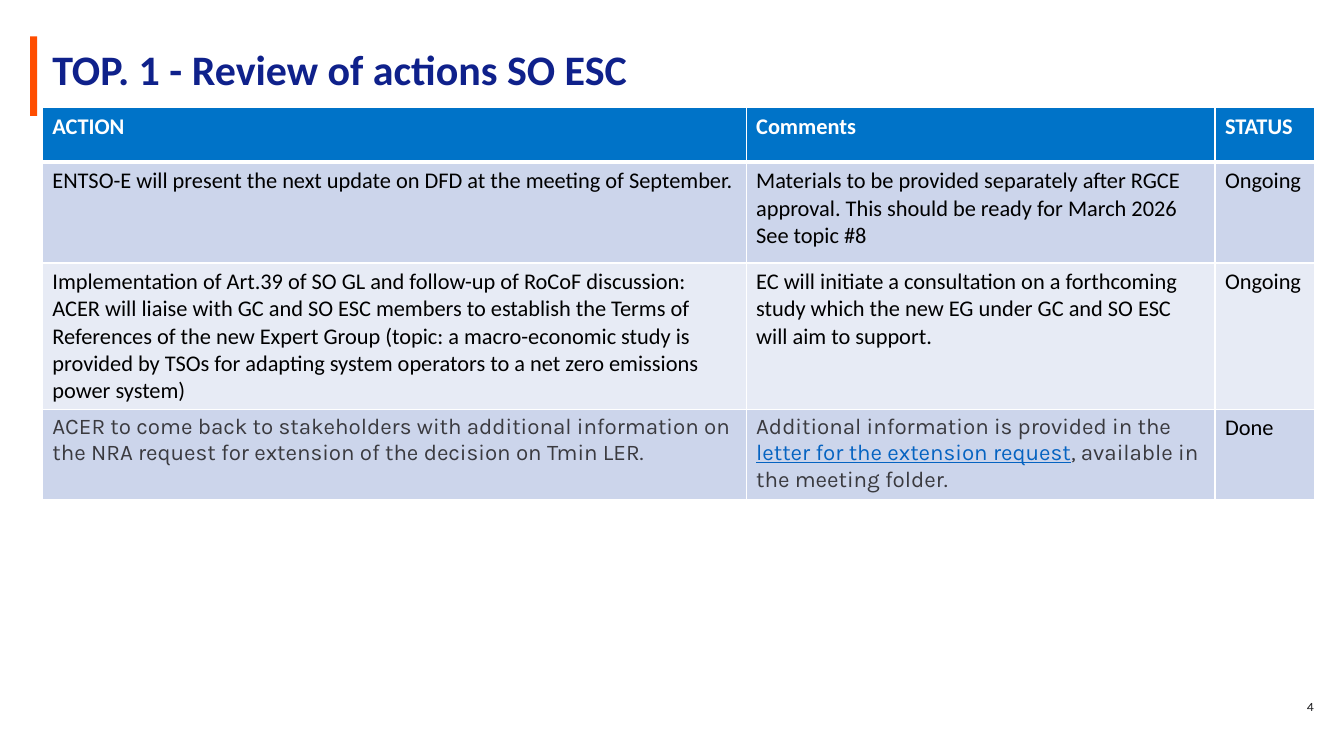
from lxml import etree
from pptx import Presentation
from pptx.dml.color import RGBColor
from pptx.enum.shapes import MSO_SHAPE
from pptx.enum.text import MSO_ANCHOR, PP_ALIGN
from pptx.oxml.ns import qn
from pptx.util import Inches, Pt

RECTANGLE = MSO_SHAPE.RECTANGLE
MIDDLE = MSO_ANCHOR.MIDDLE
LEFT, RIGHT = PP_ALIGN.LEFT, PP_ALIGN.RIGHT

COLORS = {
    "title": "0F218B", "accent": "FF4D00", "number": "1D1D20",
    "header": "0073C8", "odd": "CCD5EB", "even": "E7EBF5",
    "white": "FFFFFF", "black": "000000", "grey": "3A3A3F", "link": "0563C1",
}

# Content: a cell is a list of paragraphs, a paragraph a list of spans
TITLE = "TOP. 1 - Review of actions SO ESC"
PAGE_NUMBER = "4"
HEADER = [[["ACTION"]], [["Comments"]], [["STATUS"]]]
LINK = "letter for the extension request"
ACTIONS = [
    [
        [["ENTSO-E will present the next update on DFD at the meeting of September."]],
        [["Materials to be provided separately after RGCE approval. "
          "This should be ready for March 2026"],
         ["See topic #8"]],
        [["Ongoing"]],
    ],
    [
        [["Implementation of Art.39 of SO GL and follow-up of RoCoF discussion: "
          "ACER will liaise with GC and SO ESC members to establish the Terms of "
          "References of the new Expert Group (topic: a macro-economic study is "
          "provided by TSOs for adapting system operators to a net zero emissions "
          "power system)"]],
        [["EC will initiate a consultation on a forthcoming study which the new EG "
          "under GC and SO ESC will aim to support."]],
        [["Ongoing"]],
    ],
    [
        [["ACER to come back to stakeholders with additional information on the NRA "
          "request for extension of the decision on Tmin LER."]],
        [["Additional information is provided in the ", LINK,
          ", available in the meeting folder."]],
        [["Done"]],
    ],
]
COLUMN_WIDTHS = [6.98, 4.65, 0.99]
ROW_HEIGHTS = [0.54, 1, 1.45, 0.88]
KARLA_CELLS = {(3, 0), (3, 1)}


def rgb(name):
    return RGBColor.from_string(COLORS[name])


def style(font, name, size, color, bold=False):
    font.name, font.size, font.bold = name, Pt(size), bold
    font.color.rgb = rgb(color)


def add_label(page, text, bounds, align, line_height, *font_style):
    box = page.shapes.add_textbox(*map(Inches, bounds))
    frame = box.text_frame
    frame.word_wrap = True
    frame.vertical_anchor = MIDDLE
    para = frame.paragraphs[0]
    para.text = text
    para.alignment = align
    para.line_spacing = Pt(line_height)
    style(para.font, *font_style)


def set_borders(cell, row):
    top = 3 if row == 1 else 1
    bottom = 3 if row == 0 else 1
    properties = cell._tc.get_or_add_tcPr()
    for side, width in (("L", 1), ("R", 1), ("T", top), ("B", bottom)):
        line = etree.SubElement(properties, qn(f"a:ln{side}"), w=str(Pt(width)))
        fill = etree.SubElement(line, qn("a:solidFill"))
        etree.SubElement(fill, qn("a:srgbClr"), val=COLORS["white"])


def fill_cell(cell, paragraphs, row, column):
    set_borders(cell, row)
    cell.fill.solid()
    band = "header" if row == 0 else "odd" if row % 2 else "even"
    cell.fill.fore_color.rgb = rgb(band)
    if row == 0:
        font_style = ("Calibri", 16, "white", True)
    elif (row, column) in KARLA_CELLS:
        font_style = ("Karla", 16, "grey")
    else:
        font_style = ("Calibri", 16, "black")
    frame = cell.text_frame
    for index, spans in enumerate(paragraphs):
        para = frame.add_paragraph() if index else frame.paragraphs[0]
        style(para.font, *font_style)
        for text in spans:
            span = para.add_run()
            span.text = text
            style(span.font, *font_style)
            if text == LINK:
                span.font.color.rgb = rgb("link")
                span.font.underline = True


def main():
    deck = Presentation()
    deck.slide_width, deck.slide_height = Inches(13.33), Inches(7.5)
    page = deck.slides.add_slide(deck.slide_layouts[6])

    # Page number, accent bar and title
    add_label(page, PAGE_NUMBER, (6.75, 6.82, 6.38, 0.4), RIGHT, 9, "Karla", 9, "number")
    bar = page.shapes.add_shape(RECTANGLE, *map(Inches, (0.3, 0.36, 0.07, 0.79)))
    bar.shadow.inherit = False
    bar.fill.solid()
    bar.fill.fore_color.rgb = rgb("accent")
    bar.line.fill.background()
    add_label(page, TITLE, (0.42, 0.51, 12.71, 0.39), LEFT, 32, "Calibri", 30, "title", True)

    # Table of actions
    rows = [HEADER] + ACTIONS
    size = (sum(COLUMN_WIDTHS), sum(ROW_HEIGHTS))
    table = page.shapes.add_table(
        len(rows), len(COLUMN_WIDTHS), *map(Inches, (0.42, 1.07, *size))).table
    for column, width in zip(table.columns, COLUMN_WIDTHS):
        column.width = Inches(width)
    for line, height in zip(table.rows, ROW_HEIGHTS):
        line.height = Inches(height)
    for row, cells in enumerate(rows):
        for column, paragraphs in enumerate(cells):
            fill_cell(table.cell(row, column), paragraphs, row, column)

    deck.save("out.pptx")


if __name__ == "__main__":
    main()
